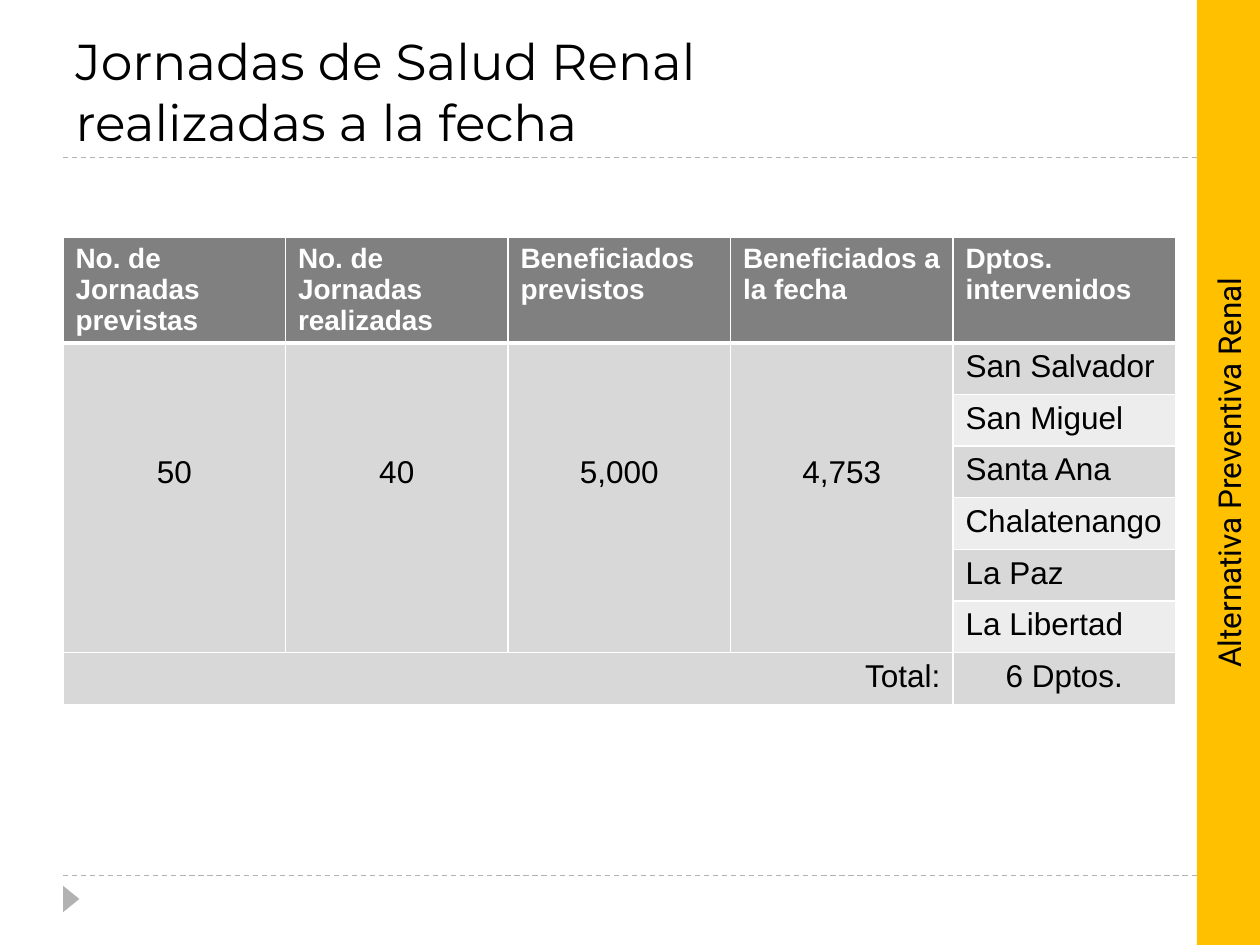
from lxml import etree
from pptx import Presentation
from pptx.dml.color import RGBColor
from pptx.enum.dml import MSO_LINE
from pptx.enum.shapes import MSO_CONNECTOR, MSO_SHAPE
from pptx.enum.text import MSO_ANCHOR, MSO_AUTO_SIZE, PP_ALIGN
from pptx.oxml.ns import qn
from pptx.util import Inches, Pt

LEFT, CENTER, RIGHT = PP_ALIGN.LEFT, PP_ALIGN.CENTER, PP_ALIGN.RIGHT
TOP, MIDDLE, BOTTOM = MSO_ANCHOR.TOP, MSO_ANCHOR.MIDDLE, MSO_ANCHOR.BOTTOM
DASH = MSO_LINE.DASH
STRAIGHT = MSO_CONNECTOR.STRAIGHT
RECTANGLE, TRIANGLE = MSO_SHAPE.RECTANGLE, MSO_SHAPE.ISOSCELES_TRIANGLE
NO_AUTOFIT = MSO_AUTO_SIZE.NONE

HEADERS = ["No. de Jornadas previstas", "No. de Jornadas realizadas", "Beneficiados previstos",
           "Beneficiados a la fecha", "Dptos. intervenidos"]
VALUES = ["50", "40", "5,000", "4,753"]
DEPARTMENTS = ["San Salvador", "San Miguel", "Santa Ana", "Chalatenango", "La Paz", "La Libertad"]
HEADER_FILL, DARK_BAND, LIGHT_BAND = "808080", "D8D8D8", "EDEDED"
RULE_COLOR = "B2B2B2"


def color(value):
    return RGBColor.from_string(value)


def write_text(frame, text, font="Arial", size=18, text_color="000000", bold=False,
               align=LEFT, anchor=TOP):
    frame.word_wrap = True
    frame.vertical_anchor = anchor
    paragraph = frame.paragraphs[0]
    paragraph.text = text
    paragraph.alignment = align
    for run in paragraph.runs:
        run.font.name = font
        run.font.size = Pt(size)
        run.font.bold = bold
        run.font.color.rgb = color(text_color)


def add_filled_shape(slide, kind, left, top, width, height, fill, rotation):
    shape = slide.shapes.add_shape(kind, Inches(left), Inches(top), Inches(width), Inches(height))
    shape.shadow.inherit = False
    shape.fill.solid()
    shape.fill.fore_color.rgb = color(fill)
    shape.line.fill.background()
    shape.rotation = rotation
    return shape


def add_dashed_rule(slide, left, top, width):
    rule = slide.shapes.add_connector(STRAIGHT, Inches(left), Inches(top),
                                      Inches(left + width), Inches(top))
    rule.line.color.rgb = color(RULE_COLOR)
    rule.line.width = Pt(0.75)
    rule.line.dash_style = DASH
    etree.SubElement(rule._element.spPr, qn("a:effectLst"))


def place_title(slide, left, top, width, height):
    title = slide.shapes.title
    title.left, title.top = Inches(left), Inches(top)
    title.width, title.height = Inches(width), Inches(height)
    title.text_frame.auto_size = NO_AUTOFIT
    write_text(title.text_frame, "Jornadas de Salud Renal\vrealizadas a la fecha",
               font="Montserrat", size=28.8, anchor=BOTTOM)


def add_side_banner(slide, left, top, width, height):
    banner = add_filled_shape(slide, RECTANGLE, left + (width - height) / 2,
                              top + (height - width) / 2, height, width, "FFC000", 270)
    write_text(banner.text_frame, "Alternativa Preventiva Renal", font="Roboto",
               align=CENTER, anchor=MIDDLE)


def style_cell(cell, fill, bottom_width=1):
    properties = cell._tc.get_or_add_tcPr()
    for side, width in (("L", 1), ("R", 1), ("T", 1), ("B", bottom_width)):
        border = etree.SubElement(properties, qn(f"a:ln{side}"), w=str(Pt(width)))
        border_fill = etree.SubElement(border, qn("a:solidFill"))
        etree.SubElement(border_fill, qn("a:srgbClr"), val="FFFFFF")
    cell.fill.solid()
    cell.fill.fore_color.rgb = color(fill)


def add_results_table(slide, left, top, width, header_height, row_height):
    column_count = len(HEADERS)
    last_column = column_count - 1
    last_department_row = len(DEPARTMENTS)
    total_row = last_department_row + 1
    height = header_height + total_row * row_height
    table = slide.shapes.add_table(total_row + 1, column_count, Inches(left), Inches(top),
                                   Inches(width), Inches(height)).table
    for column in table.columns:
        column.width = Inches(width / column_count)
    for index, row in enumerate(table.rows):
        row.height = Inches(row_height if index else header_height)
        for column_index, cell in enumerate(row.cells):
            if index == 0:
                style_cell(cell, HEADER_FILL, bottom_width=3)
            else:
                is_light = column_index == last_column and index % 2 == 0
                style_cell(cell, LIGHT_BAND if is_light else DARK_BAND)

    for column_index, header in enumerate(HEADERS):
        write_text(table.cell(0, column_index).text_frame, header, size=16,
                   text_color="FFFFFF", bold=True)
    for column_index, value in enumerate(VALUES):
        cell = table.cell(1, column_index)
        cell.merge(table.cell(last_department_row, column_index))
        write_text(cell.text_frame, value, align=CENTER)
        cell.vertical_anchor = MIDDLE
        cell.margin_bottom = Inches(0.45)
    for row_index, department in enumerate(DEPARTMENTS, start=1):
        write_text(table.cell(row_index, last_column).text_frame, department)
    total_label = table.cell(total_row, 0)
    total_label.merge(table.cell(total_row, last_column - 1))
    write_text(total_label.text_frame, "Total:", align=RIGHT)
    write_text(table.cell(total_row, last_column).text_frame, "6 Dptos.", align=CENTER)


def main():
    presentation = Presentation()
    presentation.slide_width, presentation.slide_height = Inches(10), Inches(7.5)
    slide = presentation.slides.add_slide(presentation.slide_layouts[5])
    for rule_top in (6.95, 1.25):
        add_dashed_rule(slide, 0.5, rule_top, 9)
    add_filled_shape(slide, TRIANGLE, 0.46, 7.07, 0.21, 0.13, RULE_COLOR, 90)
    add_side_banner(slide, 9.5, 0, 0.5, 7.5)
    place_title(slide, 0.5, 0.25, 9, 1)
    add_results_table(slide, 0.5, 1.88, 8.83, 0.83, 0.41)
    presentation.save("out.pptx")


if __name__ == "__main__":
    main()
